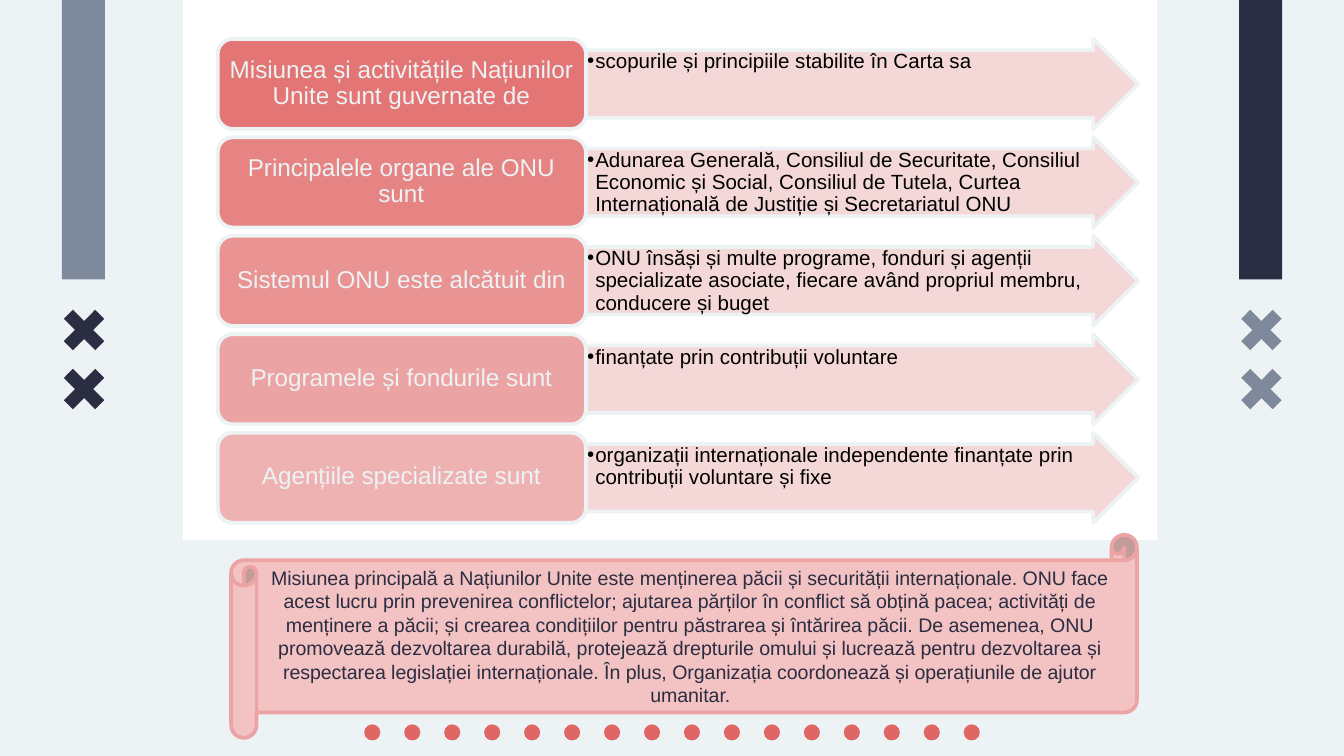
"""Build a slide on how the United Nations is organised and what it does."""
from dataclasses import dataclass

from lxml import etree
from pptx import Presentation
from pptx import util as u
from pptx.dml import color
from pptx.enum import shapes, text
from pptx.oxml import ns

KIND = shapes.MSO_SHAPE
ALIGN = text.PP_ALIGN
ANCHOR = text.MSO_ANCHOR


@dataclass(frozen=True)
class Theme:
    """Colours, font and type sizes of the slide."""
    pale: str = "EDF2F4"
    white: str = "FFFFFF"
    grey: str = "7E899C"
    navy: str = "2B2D42"
    red: str = "E06666"
    blush: str = "F3D3D3"
    pink: str = "F3C2C2"
    rose: str = "ECA3A3"
    black: str = "000000"
    font: str = "Arial"
    head: float = 13
    body: float = 11
    note: float = 10.5


THEME = Theme()

ROWS = [
    ("Misiunea și activitățile Națiunilor Unite sunt guvernate de",
     "scopurile și principiile stabilite în Carta sa"),
    ("Principalele organe ale ONU sunt",
     "Adunarea Generală, Consiliul de Securitate, Consiliul Economic și Social, "
     "Consiliul de Tutela, Curtea Internațională de Justiție și Secretariatul ONU"),
    ("Sistemul ONU este alcătuit din",
     "ONU însăși și multe programe, fonduri și agenții specializate asociate, "
     "fiecare având propriul membru, conducere și buget"),
    ("Programele și fondurile sunt",
     "finanțate prin contribuții voluntare"),
    ("Agențiile specializate sunt",
     "organizații internaționale independente finanțate prin contribuții "
     "voluntare și fixe"),
]

NOTE = (
    "Misiunea principală a Națiunilor Unite este menținerea păcii și securității "
    "internaționale. ONU face acest lucru prin prevenirea conflictelor; ajutarea "
    "părților în conflict să obțină pacea; activități de menținere a păcii; și "
    "crearea condițiilor pentru păstrarea și întărirea păcii. De asemenea, ONU "
    "promovează dezvoltarea durabilă, protejează drepturile omului și lucrează "
    "pentru dezvoltarea și respectarea legislației internaționale. În plus, "
    "Organizația coordonează și operațiunile de ajutor umanitar."
)


def rgb(code):
    return color.RGBColor.from_string(code)


def place(box):
    return [u.Inches(side) for side in box]


def draw(slide, kind, box, fill, line=None, alpha=100):
    """Add a preset shape with a plain fill and an optional outline."""
    shape = slide.shapes.add_shape(kind, *place(box))
    shape.shadow.inherit = False
    shape.fill.solid()
    shape.fill.fore_color.rgb = rgb(fill)
    if alpha < 100:
        tint = shape.fill._xPr.find(".//" + ns.qn("a:srgbClr"))
        etree.SubElement(tint, ns.qn("a:alpha"), val=str(alpha * 1000))
    if line:
        shape.line.color.rgb = rgb(line)
        shape.line.width = u.Pt(2)
    else:
        shape.line.fill.background()
    return shape


def write(shape, words, size, ink, inset, align=ALIGN.CENTER, anchor=ANCHOR.MIDDLE):
    """Fill a shape with one paragraph and return that paragraph."""
    frame = shape.text_frame
    frame.word_wrap = True
    frame.vertical_anchor = anchor
    frame.margin_left = frame.margin_right = u.Inches(inset[0])
    frame.margin_top = frame.margin_bottom = u.Inches(inset[1])
    para = frame.paragraphs[0]
    para.alignment = align
    run = para.add_run()
    run.text = words
    run.font.name = THEME.font
    run.font.size = u.Pt(size)
    run.font.color.rgb = rgb(ink)
    return para


def mark(para):
    """Give a paragraph a hanging bullet."""
    para.level = 1
    props = para._p.get_or_add_pPr()
    props.set("marL", str(u.Inches(0.06)))
    props.set("indent", str(-u.Inches(0.06)))
    tint = etree.SubElement(props, ns.qn("a:buClr"))
    etree.SubElement(tint, ns.qn("a:srgbClr"), val=THEME.black)
    etree.SubElement(props, ns.qn("a:buFont"), typeface=THEME.font)
    etree.SubElement(props, ns.qn("a:buChar"), char="•")


def side(slide, left, bar, cross):
    """Draw a side bar with two crosses below it."""
    draw(slide, KIND.RECTANGLE, (left, 0, 0.32, 2.08), bar)
    for top in (2.29, 2.73):
        plus = draw(slide, KIND.CROSS, (left, top, 0.33, 0.33), cross)
        plus.adjustments[0] = 0.356
        plus.rotation = 135


def dots(slide):
    """Draw the evenly spaced dots along the foot."""
    count, first, last = 16, 2.71, 7.17
    gap = (last - first) / (count - 1)
    for step in range(count):
        draw(slide, KIND.OVAL, (first + step * gap, 5.39, 0.12, 0.12), THEME.red)


def row(slide, top, alpha, head, body):
    """Draw one heading box and the arrow that leads on from it."""
    arrow = draw(slide, KIND.RIGHT_ARROW, (4.36, top, 4.11, 0.67),
                 THEME.blush, THEME.pale, 90)
    arrow.adjustments[0] = 0.75
    label = slide.shapes.add_textbox(*place((4.36, top + 0.08, 3.86, 0.5)))
    para = write(label, body, THEME.body, THEME.black, (0.01, 0.01),
                 ALIGN.LEFT, ANCHOR.TOP)
    para.line_spacing = 0.9
    mark(para)
    draw(slide, KIND.ROUNDED_RECTANGLE, (1.62, top, 2.74, 0.67),
         THEME.red, THEME.pale, alpha)
    label = slide.shapes.add_textbox(*place((1.65, top + 0.03, 2.67, 0.6)))
    para = write(label, head, THEME.head, THEME.pale, (0.05, 0.03))
    para.line_spacing = 0.9


def scroll(slide):
    shape = draw(slide, KIND.HORIZONTAL_SCROLL, (1.72, 3.98, 6.74, 1.51),
                 THEME.pink, THEME.rose)
    write(shape, NOTE, THEME.note, THEME.navy, (0.1, 0.05))


def main():
    deck = Presentation()
    deck.slide_width, deck.slide_height = u.Inches(10), u.Inches(10 * 9 / 16)
    slide = deck.slides.add_slide(deck.slide_layouts[6])
    slide.background.fill.solid()
    slide.background.fill.fore_color.rgb = rgb(THEME.pale)
    draw(slide, KIND.RECTANGLE, (1.36, 0, 7.25, 4.02), THEME.white)
    side(slide, 0.46, THEME.grey, THEME.navy)
    side(slide, 9.22, THEME.navy, THEME.grey)
    dots(slide)
    first, last = 0.29, 3.22
    gap = (last - first) / (len(ROWS) - 1)
    for index, (head, body) in enumerate(ROWS):
        row(slide, first + index * gap, 90 - index * 10, head, body)
    scroll(slide)
    deck.save("out.pptx")


if __name__ == "__main__":
    main()
